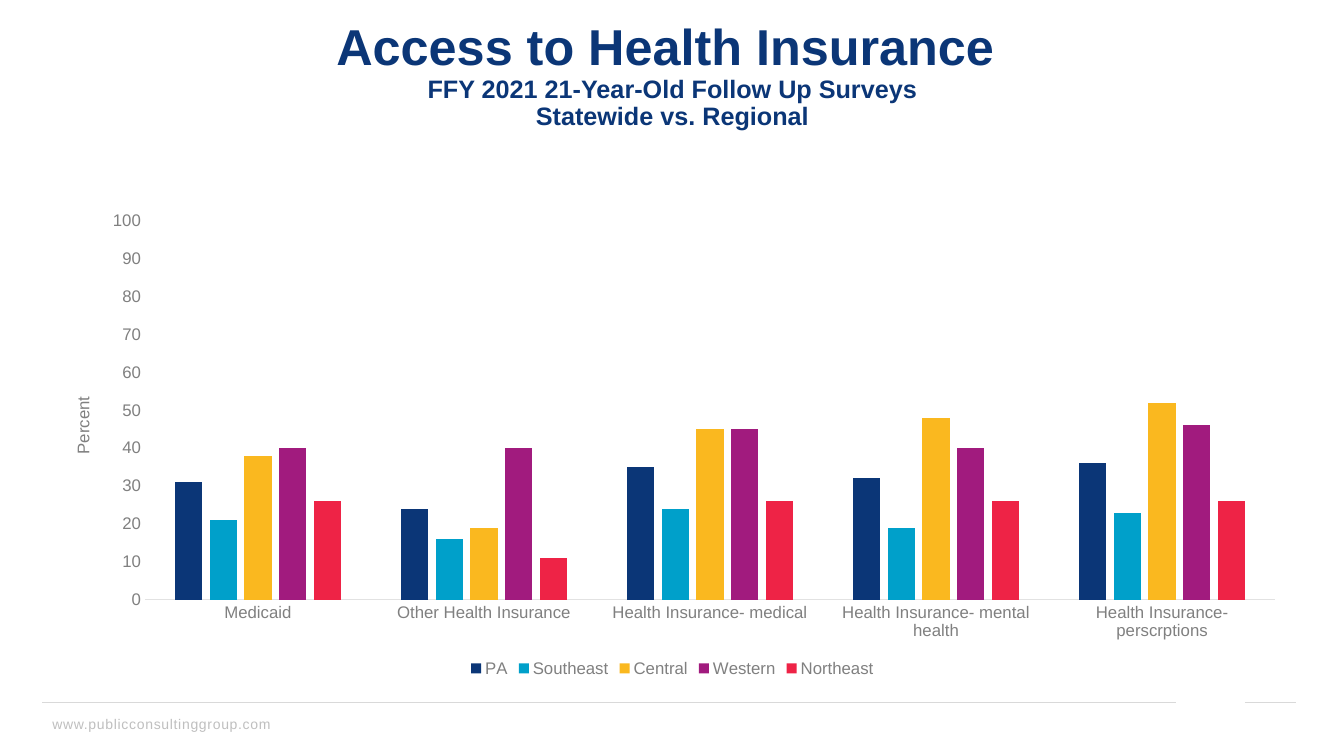
from dataclasses import dataclass

from lxml import etree
from pptx import Presentation
from pptx import util as u
from pptx.chart import data as chart_data
from pptx.dml.color import RGBColor
from pptx.enum import chart as ch, shapes, text
from pptx.oxml import ns


@dataclass(frozen=True)
class Theme:
    """Colours and type sizes of the deck."""
    font: str = "Arial"
    navy: str = "0B3677"
    label: str = "808080"
    footer: str = "BFBFBF"
    rule: str = "D9D9D9"
    axis: str = "E2E2E2"
    title_size: int = 36
    subtitle_size: int = 18
    chart_size: int = 12
    footer_size: int = 10


SERIES = {
    "PA": ("0B3677", (31, 24, 35, 32, 36)),
    "Southeast": ("00A0CA", (21, 16, 24, 19, 23)),
    "Central": ("FAB81F", (38, 19, 45, 48, 52)),
    "Western": ("A11B7E", (40, 40, 45, 40, 46)),
    "Northeast": ("EE2346", (26, 11, 26, 26, 26)),
}
CATEGORIES = (
    "Medicaid", "Other Health Insurance", "Health Insurance- medical",
    "Health Insurance- mental health", "Health Insurance- perscrptions",
)


def apply(target, values):
    """Set each named attribute on the target."""
    for name, value in values.items():
        setattr(target, name, value)


def place(parent, inner=False, **fractions):
    """Give a chart part a manual layout in fractions of the chart."""
    layout = parent.find(ns.qn("c:layout"))
    if layout is None:
        layout = etree.Element(ns.qn("c:layout"))
        parent.insert(0, layout)
    manual = etree.SubElement(layout, ns.qn("c:manualLayout"))
    settings = {"layoutTarget": "inner"} if inner else {}
    settings.update(xMode="edge", yMode="edge", **fractions)
    for tag, value in settings.items():
        etree.SubElement(manual, ns.qn(f"c:{tag}")).set("val", str(value))


class SlideBuilder:
    """Adds styled elements to the current slide."""

    def __init__(self, page, theme):
        self.page = page
        self.theme = theme

    def style(self, font, size, color, bold=False):
        """Format a font in the theme's typeface."""
        apply(font, {"name": self.theme.font, "size": u.Pt(size), "bold": bold})
        font.color.rgb = RGBColor.from_string(color)

    def title(self, lines, left, top, width, height):
        """Fill the title placeholder with lines of given sizes."""
        box = self.page.shapes.title
        apply(box, {"left": u.Cm(left), "top": u.Cm(top),
                    "width": u.Cm(width), "height": u.Cm(height)})
        apply(box.text_frame, {"word_wrap": True, "auto_size": text.MSO_AUTO_SIZE.NONE,
                               "vertical_anchor": text.MSO_ANCHOR.MIDDLE})
        para = box.text_frame.paragraphs[0]
        apply(para, {"alignment": text.PP_ALIGN.CENTER, "line_spacing": 0.9})
        for words, size in lines:
            span = para.add_run()
            span.text = words
            self.style(span.font, size, self.theme.navy, True)
            para.add_line_break()

    def footer(self, words, left, top, width, height):
        """Add the letter-spaced footer text."""
        box = self.page.shapes.add_textbox(u.Cm(left), u.Cm(top), u.Cm(width), u.Cm(height))
        box.text_frame.word_wrap = True
        span = box.text_frame.paragraphs[0].add_run()
        span.text = words
        self.style(span.font, self.theme.footer_size, self.theme.footer)
        span.font._element.set("spc", "50")

    def rule(self, left, right, y):
        """Draw a thin horizontal rule."""
        line = self.page.shapes.add_connector(
            shapes.MSO_CONNECTOR.STRAIGHT, u.Cm(left), u.Cm(y), u.Cm(right), u.Cm(y))
        line.line.color.rgb = RGBColor.from_string(self.theme.rule)
        line.line.width = u.Pt(0.5)
        etree.SubElement(line._element.spPr, ns.qn("a:effectLst"))

    def column_chart(self, categories, series, axis_name, left, top, width, height):
        """Add a clustered column chart with a percent axis."""
        data = chart_data.CategoryChartData()
        data.categories = categories
        for name, (_, values) in series.items():
            data.add_series(name, values)
        chart = self.page.shapes.add_chart(
            ch.XL_CHART_TYPE.COLUMN_CLUSTERED, u.Cm(left), u.Cm(top),
            u.Cm(width), u.Cm(height), data).chart
        apply(chart, {"has_title": False, "has_legend": True})
        self.style(chart.font, self.theme.chart_size, self.theme.label)
        apply(chart.legend, {"position": ch.XL_LEGEND_POSITION.BOTTOM,
                             "include_in_layout": False})
        self.style(chart.legend.font, self.theme.chart_size, self.theme.label)
        plot = chart.plots[0]
        apply(plot, {"gap_width": 219, "overlap": -27, "vary_by_categories": False})
        for bars, (color, _) in zip(plot.series, series.values()):
            bars.format.fill.solid()
            bars.format.fill.fore_color.rgb = RGBColor.from_string(color)
        for axis in (chart.category_axis, chart.value_axis):
            apply(axis, {"has_major_gridlines": False,
                         "major_tick_mark": ch.XL_TICK_MARK.NONE,
                         "minor_tick_mark": ch.XL_TICK_MARK.NONE})
            self.style(axis.tick_labels.font, self.theme.chart_size, self.theme.label)
        base_line = chart.category_axis.format.line
        base_line.color.rgb = RGBColor.from_string(self.theme.axis)
        base_line.width = u.Pt(0.75)
        percent = chart.value_axis
        apply(percent, {"minimum_scale": 0, "maximum_scale": 100, "major_unit": 10})
        percent.format.line.fill.background()
        span = percent.axis_title.text_frame.paragraphs[0].add_run()
        span.text = axis_name
        self.style(span.font, self.theme.chart_size, self.theme.label)
        place(percent.axis_title._element, x=0.02, y=0.4)
        place(chart._chartSpace.chart.plotArea, inner=True, x=0.08, y=0.04, w=0.9, h=0.79)


def main():
    """Build the slide and save the deck."""
    theme = Theme()
    deck = Presentation()
    apply(deck, {"slide_width": u.Cm(33.87), "slide_height": u.Cm(19.05)})
    slide = SlideBuilder(deck.slides.add_slide(deck.slide_layouts[5]), theme)
    slide.footer("www.publicconsultinggroup.com", 1.07, 17.91, 9.83, 0.71)
    for left, right in ((1.07, 29.64), (31.37, 32.66)):
        slide.rule(left, right, 17.7)
    slide.title([
        ("Access to Health Insurance ", theme.title_size),
        ("FFY 2021 21-Year-Old Follow Up Surveys", theme.subtitle_size),
        ("Statewide vs. Regional", theme.subtitle_size),
    ], 1.12, 1.02, 31.65, 3.68)
    slide.column_chart(CATEGORIES, SERIES, "Percent", 1.12, 5.08, 31.65, 12.09)
    deck.save("out.pptx")


if __name__ == "__main__":
    main()
